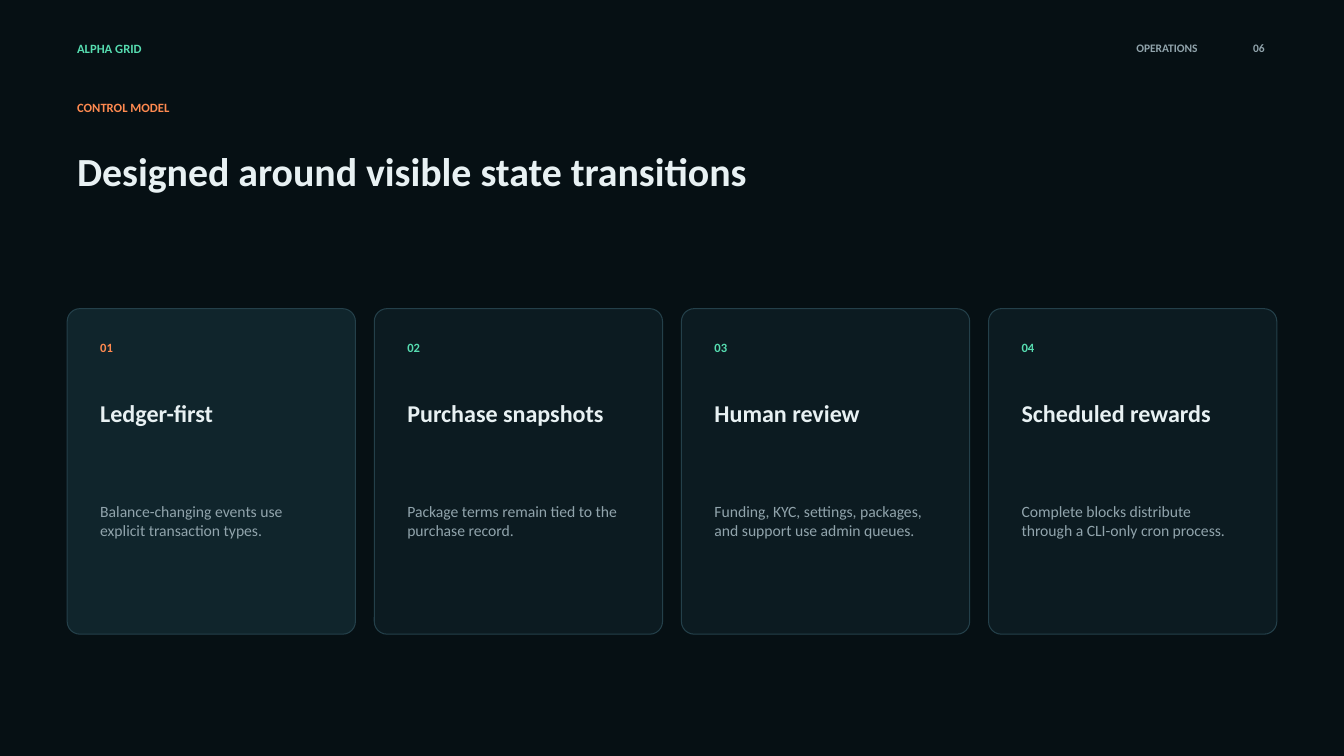
from dataclasses import dataclass

from pptx import Presentation
from pptx.dml.color import RGBColor
from pptx.enum.shapes import MSO_SHAPE
from pptx.enum.text import MSO_ANCHOR, PP_ALIGN
from pptx.slide import Slide
from pptx.util import Emu, Pt

EMU_PER_PX = 9525
COLORS = {
    "background": "061014",
    "card": "0C1B21",
    "card_active": "10252C",
    "border": "24404A",
    "green": "56DCB0",
    "orange": "FF8A50",
    "white": "E8F1F3",
    "grey": "91A4AC",
}
FONT = "Calibri"

MARGIN = 64
CONTENT_WIDTH = 1152
CARD_GAP = 18
CARD_TOP = 294
CARD_HEIGHT = 310
CARD_PADDING = 22


@dataclass(frozen=True)
class Label:
    text: str
    left: float
    top: int
    width: int
    height: int
    size: float
    color: str
    bold: bool = True
    align: PP_ALIGN = PP_ALIGN.LEFT


@dataclass(frozen=True)
class Card:
    title: str
    body: str
    fill: str = "card"
    accent: str = "green"


HEADINGS = [
    Label("ALPHA GRID", MARGIN, 34, 230, 24, 9, "green"),
    Label("OPERATIONS", 880, 34, 270, 24, 8.2, "grey", align=PP_ALIGN.RIGHT),
    Label("06", 1160, 34, 54, 24, 8.2, "grey", align=PP_ALIGN.RIGHT),
    Label("CONTROL MODEL", MARGIN, 90, 360, 24, 9, "orange"),
    Label("Designed around visible state transitions",
          MARGIN, 122, 1100, 80, 28.5, "white"),
]
CARDS = [
    Card("Ledger-first", "Balance-changing events use explicit transaction types.",
         "card_active", "orange"),
    Card("Purchase snapshots", "Package terms remain tied to the purchase record."),
    Card("Human review",
         "Funding, KYC, settings, packages, and support use admin queues."),
    Card("Scheduled rewards",
         "Complete blocks distribute through a CLI-only cron process."),
]


def px(length: float) -> Emu:
    return Emu(round(length * EMU_PER_PX))


def rgb(name: str) -> RGBColor:
    return RGBColor.from_string(COLORS[name])


def add_label(page: Slide, label: Label) -> None:
    box = page.shapes.add_textbox(
        px(label.left), px(label.top), px(label.width), px(label.height))
    frame = box.text_frame
    frame.word_wrap = True
    frame.vertical_anchor = MSO_ANCHOR.MIDDLE
    para = frame.paragraphs[0]
    para.text = label.text
    para.alignment = label.align
    para.font.name = FONT
    para.font.size = Pt(label.size)
    para.font.bold = label.bold
    para.font.color.rgb = rgb(label.color)


def add_card(page: Slide, card: Card, number: int, left: float, width: float) -> None:
    panel = page.shapes.add_shape(
        MSO_SHAPE.ROUNDED_RECTANGLE,
        px(left), px(CARD_TOP), px(width), px(CARD_HEIGHT))
    panel.adjustments[0] = 0.044
    panel.shadow.inherit = False
    panel.fill.solid()
    panel.fill.fore_color.rgb = rgb(card.fill)
    panel.line.color.rgb = rgb("border")
    panel.line.width = Pt(0.75)

    text_left = left + CARD_PADDING
    for label in (
        Label(f"{number:02}", text_left, 317, 60, 28, 9, card.accent),
        Label(card.title, text_left, 362, 230, 62, 17.2, "white"),
        Label(card.body, text_left, 438, 230, 116, 11.2, "grey", bold=False),
    ):
        add_label(page, label)


def main() -> None:
    deck = Presentation()
    deck.slide_width, deck.slide_height = px(1280), px(720)
    page = deck.slides.add_slide(deck.slide_layouts[6])
    page.background.fill.solid()
    page.background.fill.fore_color.rgb = rgb("background")

    for heading in HEADINGS:
        add_label(page, heading)

    card_width = (CONTENT_WIDTH - CARD_GAP * (len(CARDS) - 1)) / len(CARDS)
    for index, card in enumerate(CARDS):
        left = MARGIN + index * (card_width + CARD_GAP)
        add_card(page, card, index + 1, left, card_width)

    deck.save("out.pptx")


if __name__ == "__main__":
    main()
